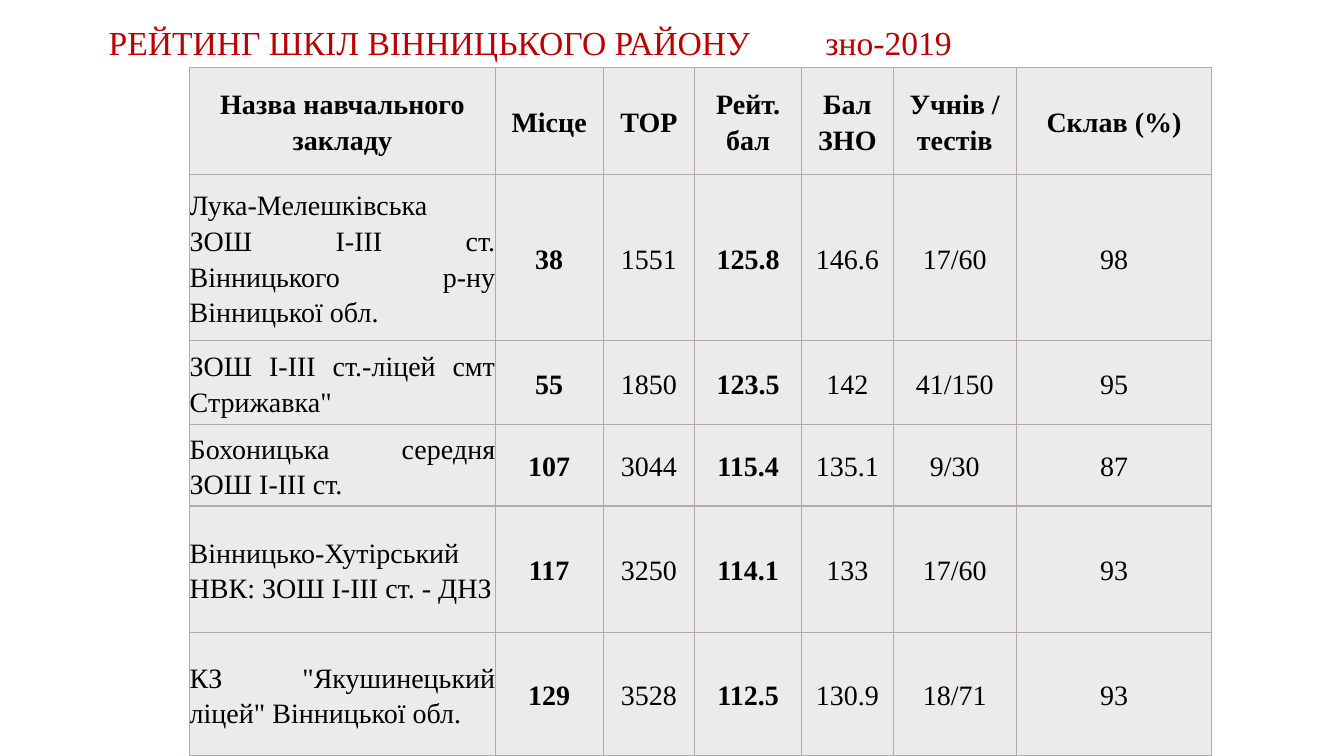
from typing import NamedTuple

from lxml.etree import SubElement
from pptx import Presentation
from pptx.dml.color import RGBColor
from pptx.enum.text import MSO_ANCHOR, PP_ALIGN
from pptx.oxml.ns import qn
from pptx.table import _Cell
from pptx.text.text import TextFrame
from pptx.util import Cm, Pt

COLORS = {"title": "C00000", "text": "000000", "cell": "EBEBEB", "border": "B4AAAA"}
FONT = "Times New Roman"


class School(NamedTuple):
    name: str
    place: str
    top: str
    rating: str
    exam_score: str
    pupils_tests: str
    passed: str


HEADINGS = School("Назва навчального закладу", "Місце", "TOP", "Рейт. бал",
                  "Бал ЗНО", "Учнів / тестів", "Склав (%)")
SCHOOLS = [
    School("Лука-Мелешківська ЗОШ I-III ст. Вінницького р-ну Вінницької обл.",
           "38", "1551", "125.8", "146.6", "17/60", "98"),
    School('ЗОШ I-III ст.-ліцей смт Стрижавка"',
           "55", "1850", "123.5", "142", "41/150", "95"),
    School("Бохоницька середня ЗОШ I-III ст.",
           "107", "3044", "115.4", "135.1", "9/30", "87"),
    School("Вінницько-Хутірський НВК: ЗОШ I-III ст. - ДНЗ",
           "117", "3250", "114.1", "133", "17/60", "93"),
    School('КЗ "Якушинецький ліцей" Вінницької обл.',
           "129", "3528", "112.5", "130.9", "18/71", "93"),
]
BOLD_FIELDS = {"place", "rating"}
COLUMN_WIDTHS = [7.7, 2.72, 2.31, 2.69, 2.31, 3.1, 4.93]
ROW_HEIGHTS = [2.69, 4.19, 2.11, 2.06, 3.18, 3.12]


def write_text(frame: TextFrame, text: str, *, size: int = 20, color: str = "text",
               bold: bool = False, align: PP_ALIGN = PP_ALIGN.CENTER,
               spacing: float = 1.15) -> None:
    paragraph = frame.paragraphs[0]
    paragraph.alignment = align
    paragraph.line_spacing = spacing
    run = paragraph.add_run()
    run.text = text
    run.font.name = FONT
    run.font.size = Pt(size)
    run.font.bold = bold
    run.font.color.rgb = RGBColor.from_string(COLORS[color])


def add_tab_stop(frame: TextFrame, position: Cm) -> None:
    properties = frame.paragraphs[0]._p.get_or_add_pPr()
    stops = SubElement(properties, qn("a:tabLst"))
    SubElement(stops, qn("a:tab"), pos=str(int(position)), algn="l")


def style_cell(cell: _Cell, *, side: float, vertical: float) -> None:
    """Give a cell its margins (in cm), borders and fill."""
    cell.margin_left = cell.margin_right = Cm(side)
    cell.margin_top = cell.margin_bottom = Cm(vertical)
    cell.vertical_anchor = MSO_ANCHOR.MIDDLE
    properties = cell._tc.get_or_add_tcPr()
    for edge in ("a:lnL", "a:lnR", "a:lnT", "a:lnB"):
        line = SubElement(properties, qn(edge), w=str(int(Pt(1))))
        SubElement(SubElement(line, qn("a:solidFill")), qn("a:srgbClr"),
                   val=COLORS["border"])
    cell.fill.solid()
    cell.fill.fore_color.rgb = RGBColor.from_string(COLORS["cell"])


def add_title(slide) -> None:
    title = slide.shapes.add_textbox(Cm(2.49), Cm(0.58), Cm(29.21), Cm(1.09)).text_frame
    title.word_wrap = True
    title.vertical_anchor = MSO_ANCHOR.MIDDLE
    write_text(title, "РЕЙТИНГ ШКІЛ ВІННИЦЬКОГО РАЙОНУ\tзно-2019", size=24,
               color="title", align=PP_ALIGN.LEFT, spacing=0.9)
    add_tab_stop(title, Cm(18.06))


def add_rating_table(slide) -> None:
    records = [HEADINGS, *SCHOOLS]
    rating = slide.shapes.add_table(
        len(records), len(HEADINGS), Cm(4.78), Cm(1.7),
        Cm(sum(COLUMN_WIDTHS)), Cm(sum(ROW_HEIGHTS))).table
    for column, width in zip(rating.columns, COLUMN_WIDTHS):
        column.width = Cm(width)
    for row, height, record in zip(rating.rows, ROW_HEIGHTS, records):
        row.height = Cm(height)
        heading = record is HEADINGS
        for cell, field, value in zip(row.cells, School._fields, record):
            style_cell(cell, side=0.25 if heading else 0, vertical=0.05 if heading else 0)
            justified = field == "name" and not heading
            write_text(cell.text_frame, value, bold=heading or field in BOLD_FIELDS,
                       align=PP_ALIGN.JUSTIFY if justified else PP_ALIGN.CENTER)


def main() -> None:
    presentation = Presentation()
    presentation.slide_width, presentation.slide_height = Cm(33.87), Cm(19.05)
    slide = presentation.slides.add_slide(presentation.slide_layouts[6])
    add_title(slide)
    add_rating_table(slide)
    presentation.save("out.pptx")


if __name__ == "__main__":
    main()
